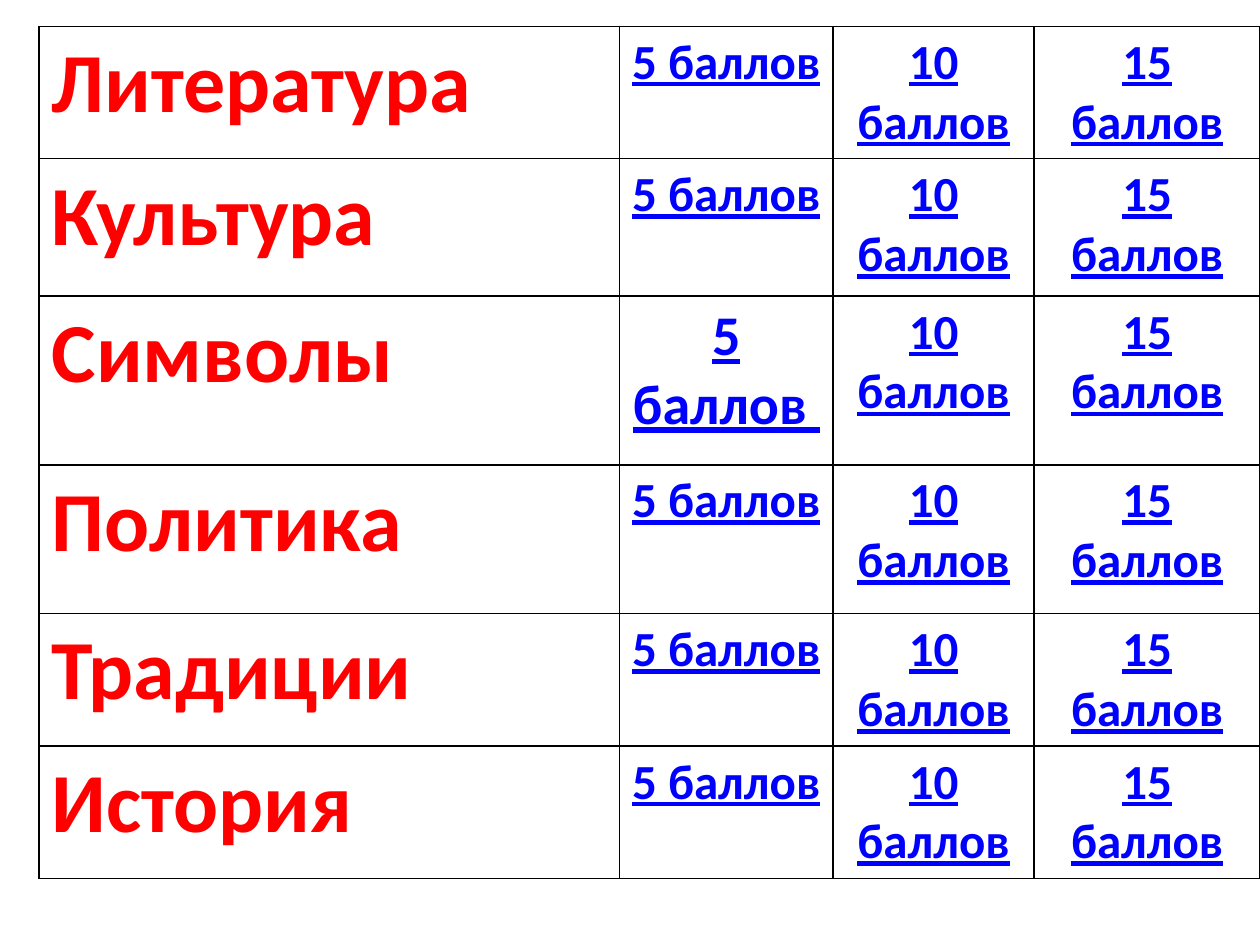
from lxml.etree import SubElement
from pptx import Presentation
from pptx.dml.color import RGBColor
from pptx.enum.text import PP_ALIGN as Align
from pptx.oxml.ns import qn
from pptx.util import Cm, Pt

TOPICS = ["Литература", "Культура", "Символы", "Политика", "Традиции", "История"]
SCORES = ["5 баллов", "10 баллов", "15 баллов"]
COLUMN_WIDTHS = [11.7, 4.3, 4.06, 4.55]
ROW_HEIGHTS = [2.67, 2.77, 3.4, 3, 2.67, 2.67]
TOPIC_FORMAT = {"size": Pt(48), "underline": False}
SCORE_FORMAT = {"size": Pt(28), "underline": True}
LARGE_SCORE_FORMAT = {**SCORE_FORMAT, "size": Pt(32)}


def color(value):
    return RGBColor.from_string(value)


def add_borders(cell, value="000000"):
    properties = cell._tc.get_or_add_tcPr()
    for position, side in enumerate(("a:lnL", "a:lnR", "a:lnT", "a:lnB")):
        line = properties.makeelement(qn(side), {"w": str(Pt(1))})
        fill = SubElement(line, qn("a:solidFill"))
        SubElement(fill, qn("a:srgbClr"), val=value)
        properties.insert(position, line)


def fill_cell(cell, text, font_format, font_color, alignment):
    cell.fill.solid()
    cell.fill.fore_color.rgb = color("FFFFFF")
    add_borders(cell)
    paragraph = cell.text_frame.paragraphs[0]
    paragraph.alignment = alignment
    run = paragraph.add_run()
    run.text = text
    for name, value in {"name": "Calibri", "bold": True, **font_format}.items():
        setattr(run.font, name, value)
    run.font.color.rgb = color(font_color)


def add_score_table(slide, left, top, width, height):
    shape = slide.shapes.add_table(
        len(TOPICS), len(SCORES) + 1, Cm(left), Cm(top), Cm(width), Cm(height)
    )
    table = shape.table
    table.first_row = table.horz_banding = False
    for column, column_width in zip(table.columns, COLUMN_WIDTHS):
        column.width = Cm(column_width)
    for row, row_height, topic in zip(table.rows, ROW_HEIGHTS, TOPICS):
        row.height = Cm(row_height)
        topic_cell, *score_cells = row.cells
        fill_cell(topic_cell, topic, TOPIC_FORMAT, "FF0000", Align.LEFT)
        for cell, score in zip(score_cells, SCORES):
            font_format = SCORE_FORMAT
            if topic == "Символы" and score == SCORES[0]:
                score, font_format = score + " ", LARGE_SCORE_FORMAT
            fill_cell(cell, score, font_format, "0000FF", Align.CENTER)


def main():
    presentation = Presentation()
    presentation.slide_width = Cm(25.4)
    presentation.slide_height = Cm(19.05)
    slide = presentation.slides.add_slide(presentation.slide_layouts[6])
    add_score_table(slide, 0.79, 0.53, sum(COLUMN_WIDTHS), sum(ROW_HEIGHTS))
    presentation.save("out.pptx")


if __name__ == "__main__":
    main()
